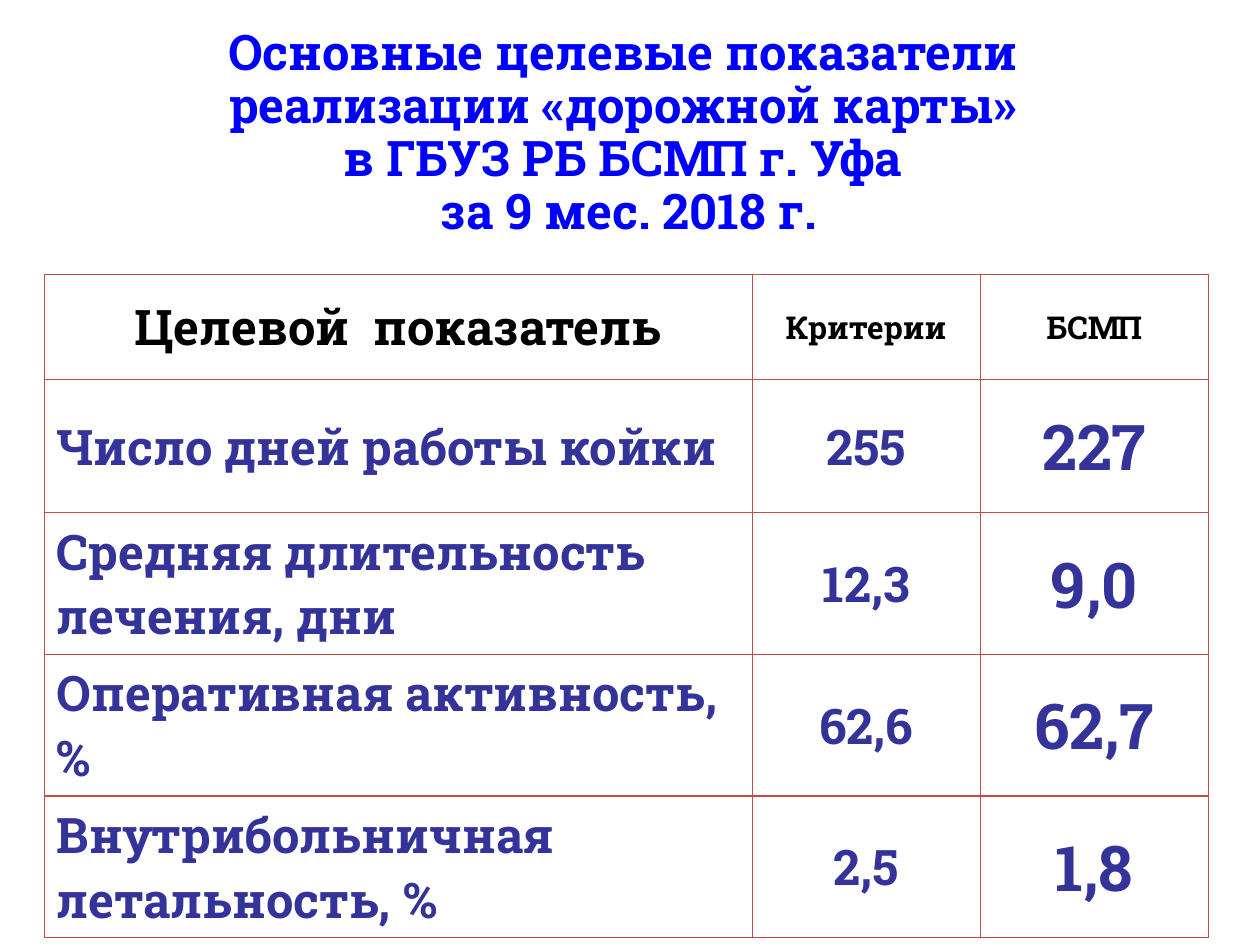
from pptx import Presentation
from pptx.dml.color import RGBColor
from pptx.enum import text as t
from pptx.oxml import parse_xml
from pptx.oxml.ns import nsdecls
from pptx.util import Inches, Pt

TITLE = ("Основные целевые показатели \vреализации «дорожной карты» \v"
         "в ГБУЗ РБ БСМП г. Уфа \vза 9 мес. 2018 г.")
ROWS = [
    ("Целевой  показатель", "Критерии", "БСМП"),
    ("Число дней работы койки", "255", "227"),
    ("Средняя длительность лечения, дни", "12,3", "9,0"),
    ("Оперативная активность, %", "62,6", "62,7"),
    ("Внутрибольничная летальность, %", "2,5", "1,8"),
]
WIDTHS = (5.62, 1.81, 1.81)
HEIGHTS = (0.83, 1.06, 1.12, 1.12, 1.12)
HEAD_SIZES = (28, 18, 18)
BODY_SIZES = (28, 28, 36)
FONT = "Roboto Slab"
BLUE = RGBColor(0x00, 0x00, 0xFF)
BLACK = RGBColor(0x00, 0x00, 0x00)
INDIGO = RGBColor(0x33, 0x33, 0x99)
WHITE = RGBColor(0xFF, 0xFF, 0xFF)
RED = RGBColor(0xBF, 0x4C, 0x48)


def style(frame, size, color, align):
    frame.word_wrap = True
    for para in frame.paragraphs:
        para.alignment = align
        for run in para.runs:
            font = run.font
            font.name, font.size, font.bold = FONT, Pt(size), True
            font.color.rgb = color


def border(cell):
    props = cell._tc.get_or_add_tcPr()
    for spot, side in enumerate(("lnL", "lnR", "lnT", "lnB")):
        props.insert(spot, parse_xml(
            f'<a:{side} {nsdecls("a")} w="{Pt(0.75)}"><a:solidFill>'
            f'<a:srgbClr val="{RED}"/></a:solidFill></a:{side}>'))


def add_title(slide):
    title = slide.shapes.title
    title.left, title.top = Inches(-0.01), Inches(0.76)
    title.width, title.height = Inches(10), Inches(0.61)
    frame = title.text_frame
    frame.text = TITLE
    frame.auto_size = t.MSO_AUTO_SIZE.NONE
    frame.vertical_anchor = t.MSO_ANCHOR.MIDDLE
    frame.paragraphs[0].line_spacing = 0.9
    style(frame, 28, BLUE, t.PP_ALIGN.CENTER)


def add_grid(slide):
    grid = slide.shapes.add_table(
        len(ROWS), len(WIDTHS), Inches(0.35), Inches(2.18),
        Inches(sum(WIDTHS)), Inches(sum(HEIGHTS))).table
    grid.first_row = grid.horz_banding = False
    for col, width in zip(grid.columns, WIDTHS):
        col.width = Inches(width)
    for row, height in zip(grid.rows, HEIGHTS):
        row.height = Inches(height)
    for r, row in enumerate(ROWS):
        sizes, color = (BODY_SIZES, INDIGO) if r else (HEAD_SIZES, BLACK)
        for c, words in enumerate(row):
            cell = grid.cell(r, c)
            cell.text_frame.text = words
            cell.vertical_anchor = t.MSO_ANCHOR.MIDDLE
            cell.fill.solid()
            cell.fill.fore_color.rgb = WHITE
            align = t.PP_ALIGN.LEFT if r and not c else t.PP_ALIGN.CENTER
            style(cell.text_frame, sizes[c], color, align)
            border(cell)


def main():
    deck = Presentation()
    deck.slide_width, deck.slide_height = Inches(10), Inches(7.5)
    slide = deck.slides.add_slide(deck.slide_layouts[5])
    add_title(slide)
    add_grid(slide)
    deck.save("out.pptx")


if __name__ == "__main__":
    main()
